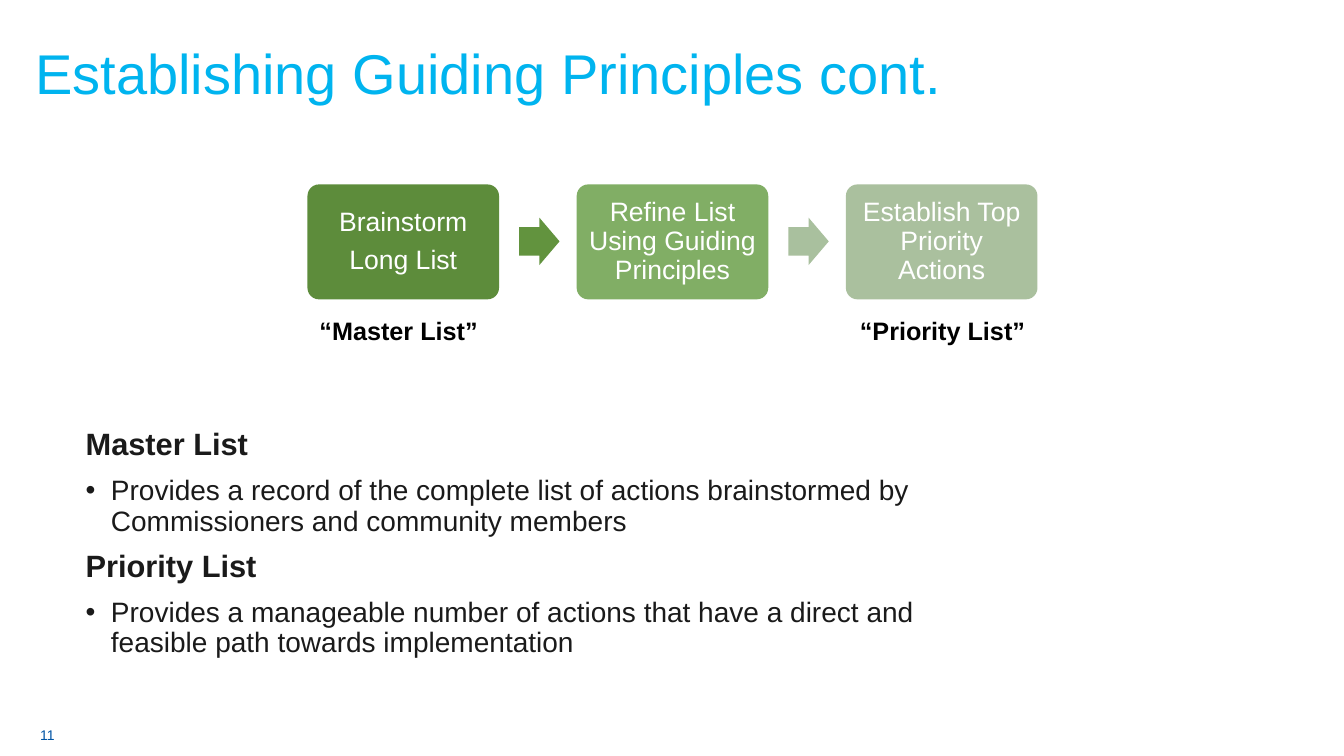
"""Build the guiding principles slide with its three-step flow and list notes."""
from dataclasses import dataclass
from typing import Optional

from lxml.etree import SubElement
from pptx import Presentation
from pptx.dml.color import RGBColor
from pptx.enum.shapes import MSO_SHAPE as Preset
from pptx.enum.text import MSO_ANCHOR as Anchor, MSO_AUTO_SIZE as AutoSize, PP_ALIGN as Align
from pptx.oxml.ns import qn
from pptx.util import Inches, Pt

FONT = "Arial"
STEP_LEFT, STEP_PITCH, STEP_TOP = 3.05, 2.67, 1.83
STEP_WIDTH, STEP_HEIGHT = 1.9, 1.14
ARROW_OFFSET, ARROW_TOP = 2.1, 2.16
INDENT = 0.25


@dataclass
class Step:
    """A box of the flow and the colour of the arrow that follows it."""
    lines: list[str]
    fill: str
    arrow: Optional[str] = None


@dataclass
class Label:
    """A one-line text box."""
    text: str
    left: float
    top: float
    width: float
    size: float
    color: str
    bold: bool = False
    anchor: Anchor = Anchor.TOP


@dataclass
class Note:
    """A heading or a bulleted line of the body."""
    text: str
    heading: bool


STEPS = [
    Step(["Brainstorm", "Long List"], "5D8C3B", "62933E"),
    Step(["Refine List Using Guiding Principles"], "81AE65", "A9C09E"),
    Step(["Establish Top Priority Actions"], "AAC09E"),
]
LABELS = [
    Label("“Master List”", 3.07, 3.08, 1.82, 18, "000000", bold=True),
    Label("“Priority List”", 8.43, 3.08, 1.98, 18, "000000", bold=True),
    Label("11", 0.3, 7.09, 4, 10, "0054A5", anchor=Anchor.MIDDLE),
]
NOTES = [
    Note("Master List", True),
    Note("Provides a record of the complete list of actions brainstormed by "
         "Commissioners and community members", False),
    Note("Priority List", True),
    Note("Provides a manageable number of actions that have a direct and "
         "feasible path towards implementation", False),
]


def rgb(value: str) -> RGBColor:
    """Turn a hex string into a colour."""
    return RGBColor.from_string(value)


def add_span(para, text: str, size: float, color: str, bold: bool = False) -> None:
    """Add one formatted run to a paragraph."""
    span = para.add_run()
    span.text = text
    span.font.name, span.font.size, span.font.bold = FONT, Pt(size), bold
    span.font.color.rgb = rgb(color)


def next_para(frame, index: int):
    """Return the first paragraph of a frame, or a new one after it."""
    return frame.add_paragraph() if index else frame.paragraphs[0]


def place(shape, left: float, top: float, width: float, height: float) -> None:
    """Move and size a placeholder."""
    shape.left, shape.top = Inches(left), Inches(top)
    shape.width, shape.height = Inches(width), Inches(height)


def set_insets(frame, left: float, top: float, right: float, bottom: float) -> None:
    """Set the four margins of a text frame."""
    frame.margin_left, frame.margin_top = Inches(left), Inches(top)
    frame.margin_right, frame.margin_bottom = Inches(right), Inches(bottom)


def add_block(page, preset: Preset, left: float, top: float, width: float,
              height: float, fill: str, adjustment: float):
    """Add a flat filled shape without an outline."""
    block = page.shapes.add_shape(preset, Inches(left), Inches(top), Inches(width), Inches(height))
    block.shadow.inherit = False
    block.fill.solid()
    block.fill.fore_color.rgb = rgb(fill)
    block.line.fill.background()
    block.adjustments[0] = adjustment
    return block


def add_step(page, step: Step, left: float) -> None:
    """Add a flow box and its following arrow."""
    box = add_block(page, Preset.ROUNDED_RECTANGLE, left, STEP_TOP,
                    STEP_WIDTH, STEP_HEIGHT, step.fill, 0.1)
    frame = box.text_frame
    frame.word_wrap, frame.vertical_anchor = True, Anchor.MIDDLE
    set_insets(frame, 0.08, 0.08, 0.08, 0.08)
    for index, line in enumerate(step.lines):
        para = next_para(frame, index)
        para.alignment, para.line_spacing, para.space_after = Align.CENTER, 0.9, Pt(7)
        add_span(para, line, 19, "FFFFFF")
    if step.arrow:
        add_block(page, Preset.RIGHT_ARROW, left + ARROW_OFFSET, ARROW_TOP,
                  0.4, 0.47, step.arrow, 0.6)


def add_label(page, label: Label) -> None:
    """Add a one-line text box."""
    box = page.shapes.add_textbox(Inches(label.left), Inches(label.top),
                                  Inches(label.width), Inches(0.4))
    frame = box.text_frame
    frame.word_wrap, frame.vertical_anchor = True, label.anchor
    add_span(frame.paragraphs[0], label.text, label.size, label.color, label.bold)


def fill_title(title) -> None:
    """Place and fill the title placeholder."""
    place(title, 0.3, 0.27, 9.44, 0.79)
    frame = title.text_frame
    frame.auto_size, frame.word_wrap = AutoSize.NONE, True
    frame.vertical_anchor = Anchor.BOTTOM
    set_insets(frame, 0.05, 0, 0.1, 0)
    para = frame.paragraphs[0]
    para.alignment, para.line_spacing = Align.LEFT, 0.9
    add_span(para, "Establishing Guiding Principles cont.", 40, "00B4EF")


def fill_body(body) -> None:
    """Place the body placeholder and fill it with headings and bullets."""
    place(body, 0.75, 4.21, 9.44, 2.49)
    frame = body.text_frame
    frame.auto_size, frame.word_wrap = AutoSize.NONE, True
    for index, note in enumerate(NOTES):
        para = next_para(frame, index)
        para.line_spacing, para.space_before = 0.9, Pt(10 if index else 0)
        indent = 0 if note.heading else Inches(INDENT)
        properties = para._p.get_or_add_pPr()
        properties.set("marL", str(indent))
        properties.set("indent", str(-indent))
        if note.heading:
            SubElement(properties, qn("a:buNone"))
        else:
            SubElement(properties, qn("a:buFont"), typeface=FONT)
            SubElement(properties, qn("a:buChar"), char="•")
        add_span(para, note.text, 22 if note.heading else 20, "1A1A1A", note.heading)


def main() -> None:
    """Build and save the deck."""
    deck = Presentation()
    deck.slide_width, deck.slide_height = Inches(13.33), Inches(7.5)
    page = deck.slides.add_slide(deck.slide_layouts[1])
    fill_title(page.shapes.title)
    fill_body(page.placeholders[1])
    for index, step in enumerate(STEPS):
        add_step(page, step, STEP_LEFT + index * STEP_PITCH)
    for label in LABELS:
        add_label(page, label)
    deck.save("out.pptx")


if __name__ == "__main__":
    main()
